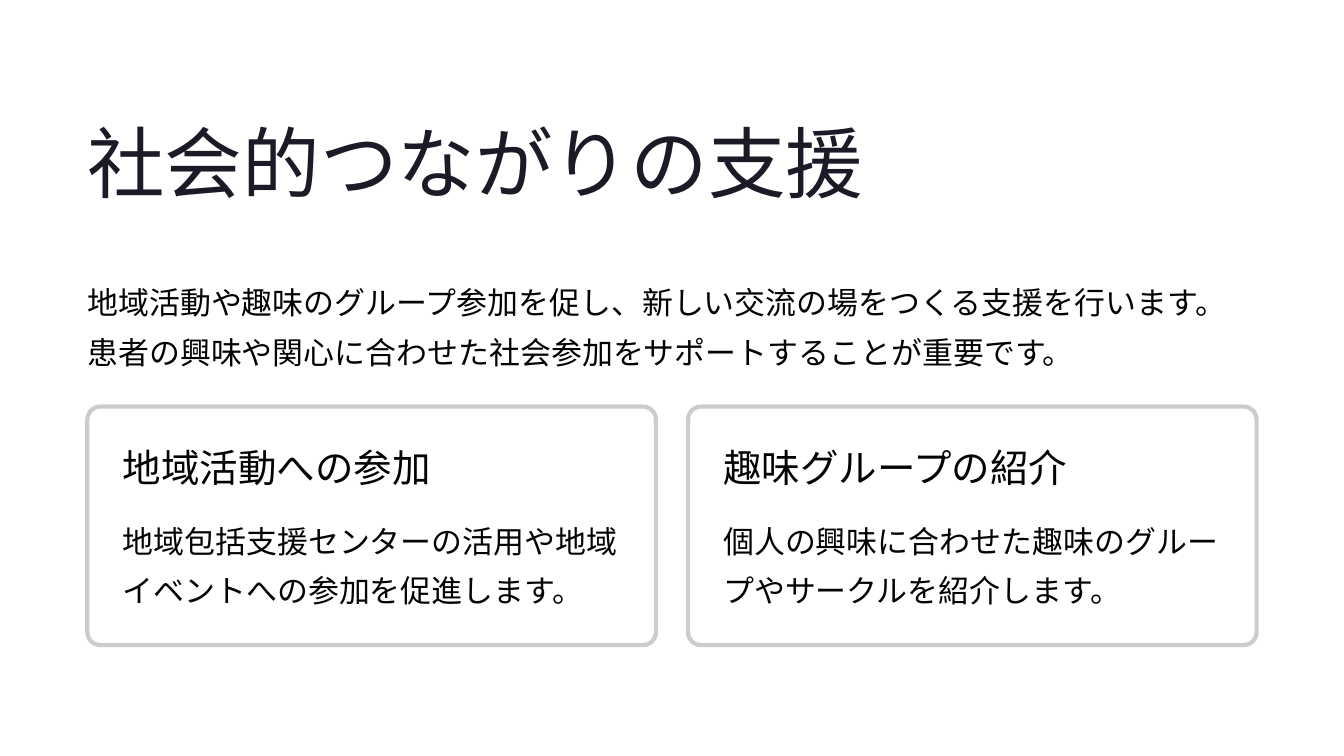
from lxml import etree
from pptx import Presentation
from pptx.dml.color import RGBColor
from pptx.enum.shapes import MSO_SHAPE
from pptx.enum.text import MSO_ANCHOR, MSO_AUTO_SIZE, PP_ALIGN
from pptx.oxml.ns import qn
from pptx.util import Inches, Pt

ROUNDED = MSO_SHAPE.ROUNDED_RECTANGLE
TOP = MSO_ANCHOR.TOP
NO_AUTOFIT = MSO_AUTO_SIZE.NONE
LEFT = PP_ALIGN.LEFT

MARGIN = 1.04
CONTENT_WIDTH = 13.92
CARD_TOP = 4.84
CARD_WIDTH = 6.77
CARD_HEIGHT = 2.84
CARD_STEP = 7.15
CARD_PADDING = 0.42

INTRODUCTION = (
    "地域活動や趣味のグループ参加を促し、新しい交流の場をつくる支援を行います。"
    "患者の興味や関心に合わせた社会参加をサポートすることが重要です。"
)
CARDS = [
    ("地域活動への参加", "地域包括支援センターの活用や地域イベントへの参加を促進します。"),
    ("趣味グループの紹介", "個人の興味に合わせた趣味のグループやサークルを紹介します。"),
]


def color(value):
    return RGBColor.from_string(value)


def set_attributes(target, values):
    for name, value in values.items():
        setattr(target, name, value)


class SlideBuilder:
    styles = {
        "title": {"font": "Inter", "size": 66.5, "spacing": 83.5, "color": "1B1B27", "wrap": False},
        "heading": {"font": "Inter", "size": 33, "spacing": 41.5, "color": "030303", "wrap": False},
        "body": {"font": "Lato", "size": 26.5, "spacing": 42.5, "color": "030303", "wrap": True},
    }

    def __init__(self, slide):
        self.slide = slide

    def format_text(self, shape, text, style_name):
        style = self.styles[style_name]
        frame = shape.text_frame
        frame.text = text
        set_attributes(frame, {
            "margin_left": 0, "margin_top": 0, "margin_right": 0, "margin_bottom": 0,
            "auto_size": NO_AUTOFIT, "word_wrap": style["wrap"], "vertical_anchor": TOP,
        })
        paragraph = frame.paragraphs[0]
        set_attributes(paragraph, {
            "alignment": LEFT, "line_spacing": Pt(style["spacing"]),
            "space_before": Pt(0), "space_after": Pt(0),
        })
        font = paragraph.runs[0].font
        set_attributes(font, {"name": style["font"], "size": Pt(style["size"]), "bold": False})
        font.color.rgb = color(style["color"])

    def title(self, text, left, top, width, height):
        shape = self.slide.shapes.title
        set_attributes(shape, {
            "left": Inches(left), "top": Inches(top),
            "width": Inches(width), "height": Inches(height),
        })
        self.format_text(shape, text, "title")

    def text(self, text, style_name, left, top, width, height):
        box = self.slide.shapes.add_textbox(Inches(left), Inches(top), Inches(width), Inches(height))
        self.format_text(box, text, style_name)

    def panel(self, left, top, width, height):
        shape = self.slide.shapes.add_shape(
            ROUNDED, Inches(left), Inches(top), Inches(width), Inches(height))
        shape.adjustments[0] = 0.055
        shape.shadow.inherit = False
        shape.fill.solid()
        shape.fill.fore_color.rgb = color("FFFFFF")
        fill_color = shape.element.spPr.find(qn("a:solidFill"))[0]
        etree.SubElement(fill_color, qn("a:alpha"), val="95000")
        shape.line.color.rgb = color("CCCCCC")
        shape.line.width = Pt(3.6)

    def card(self, heading, body, left):
        self.panel(left, CARD_TOP, CARD_WIDTH, CARD_HEIGHT)
        text_left = left + CARD_PADDING
        text_top = CARD_TOP + CARD_PADDING
        text_width = CARD_WIDTH - 2 * CARD_PADDING
        self.text(heading, "heading", text_left, text_top, 4.65, 0.58)
        self.text(body, "body", text_left, text_top + 0.81, text_width, 1.19)


def main():
    presentation = Presentation()
    presentation.slide_width = Inches(16)
    presentation.slide_height = Inches(9)
    builder = SlideBuilder(presentation.slides.add_slide(presentation.slide_layouts[5]))
    builder.title("社会的つながりの支援", MARGIN, 1.32, 9.3, 1.16)
    builder.text(INTRODUCTION, "body", MARGIN, 3.23, CONTENT_WIDTH, 1.19)
    for index, (heading, body) in enumerate(CARDS):
        builder.card(heading, body, MARGIN + index * CARD_STEP)
    presentation.save("out.pptx")


if __name__ == "__main__":
    main()
